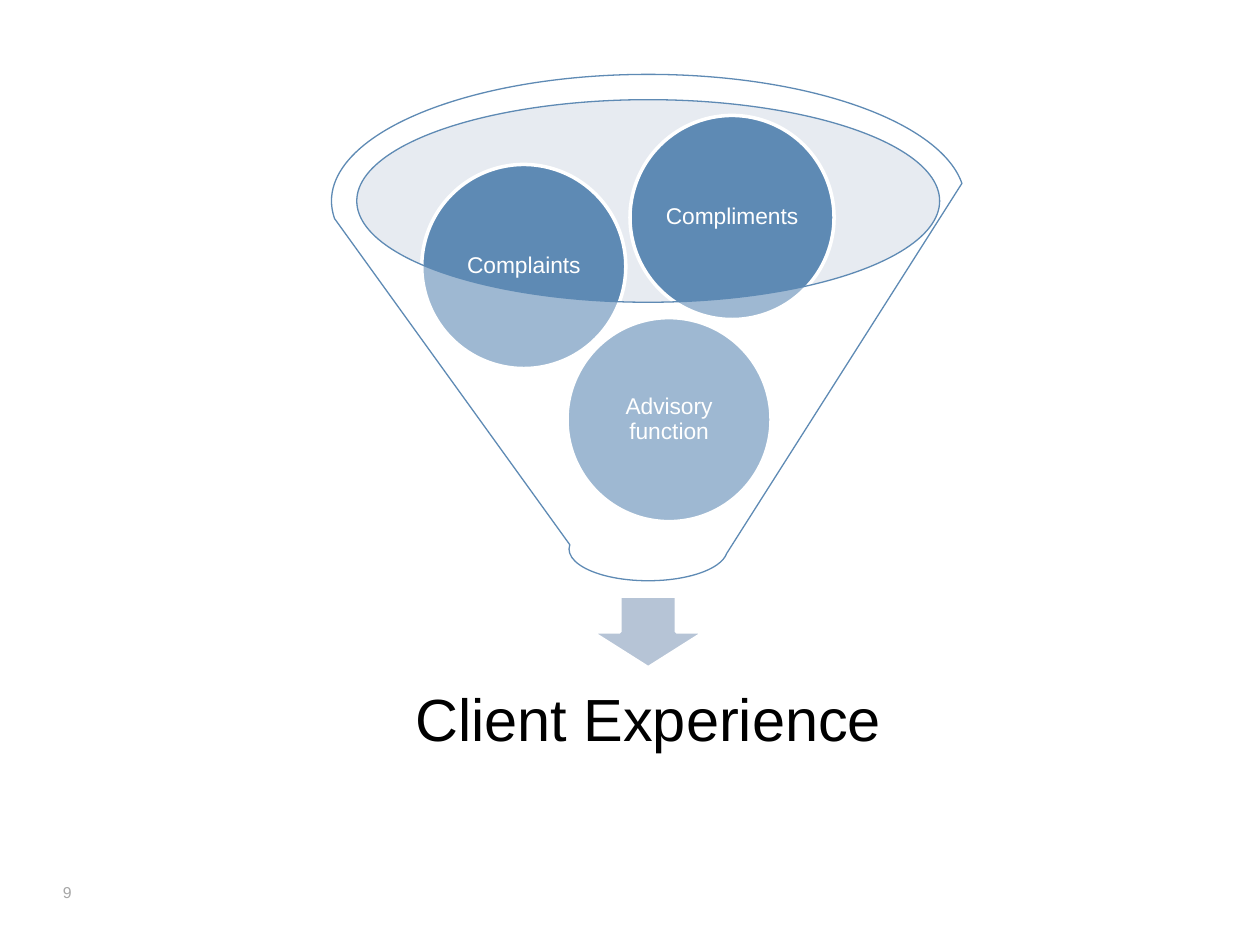
from lxml import etree
from pptx import Presentation
from pptx.dml.color import RGBColor
from pptx.enum import shapes, text
from pptx.oxml.ns import qn
from pptx.util import Pt

BLUE = RGBColor(0x5E, 0x8A, 0xB4)
PALE = RGBColor(0xC5, 0xCF, 0xDE)
ARROW = RGBColor(0xB6, 0xC4, 0xD6)
GREY = RGBColor(0xA6, 0xA6, 0xA6)
WHITE = RGBColor(0xFF, 0xFF, 0xFF)
BLACK = RGBColor(0, 0, 0)

OUTCOME = "Client Experience"
PAGE = "9"
INPUTS = [
    ("Advisory function", 324, 181.5),
    ("Complaints", 241, 94),
    ("Compliments", 360, 66),
]
CIRCLE = 116.6
CENTER = 370.4


def write(frame, words, size, color, margin, anchor, align=None):
    frame.text = words
    frame.word_wrap = True
    frame.auto_size = text.MSO_AUTO_SIZE.NONE
    frame.vertical_anchor = anchor
    frame.margin_left = frame.margin_right = Pt(margin)
    frame.margin_top = frame.margin_bottom = Pt(margin)
    paragraph = frame.paragraphs[0]
    paragraph.alignment = align
    if align is not None:
        paragraph.line_spacing = 0.9
    font = paragraph.runs[0].font
    font.name, font.size, font.color.rgb = "Arial", Pt(size), color


def draw(slide, kind, box, fill, line=None, width=0, opacity=100):
    part = slide.shapes.add_shape(kind, *map(Pt, box))
    part.shadow.inherit = False
    part.fill.solid()
    part.fill.fore_color.rgb = fill
    if opacity < 100:
        color = part.fill._xPr.find(qn("a:solidFill"))[0]
        etree.SubElement(color, qn("a:alpha"), val=str(opacity * 1000))
    if line is None:
        part.line.fill.background()
    else:
        part.line.color.rgb = line
        part.line.width = Pt(width)
    return part


def centered(width, top, height):
    return CENTER - width / 2, top, width, height


def main():
    deck = Presentation()
    deck.slide_width, deck.slide_height = Pt(720), Pt(540)
    slide = deck.slides.add_slide(deck.slide_layouts[5])
    kinds = shapes.MSO_SHAPE
    middle, center = text.MSO_ANCHOR.MIDDLE, text.PP_ALIGN.CENTER

    page = slide.shapes.add_textbox(Pt(36), Pt(470), Pt(144), Pt(45.5))
    write(page.text_frame, PAGE, 9, GREY, 0, text.MSO_ANCHOR.BOTTOM)

    draw(slide, kinds.OVAL, centered(333.4, 56.9, 115.9), PALE, opacity=40)
    draw(slide, kinds.DOWN_ARROW, centered(64.8, 340.6, 41), ARROW, WHITE, 2)

    outcome = slide.shapes.title
    outcome.left, outcome.top, outcome.width, outcome.height = map(
        Pt, centered(310.3, 373.7, 77.8))
    write(outcome.text_frame, OUTCOME, 34, BLACK, 18.7, middle, center)

    for label, left, top in INPUTS:
        circle = draw(slide, kinds.OVAL, (left, top, CIRCLE, CIRCLE), BLUE, WHITE, 2)
        write(circle.text_frame, label, 13, WHITE, 1.3, middle, center)

    draw(slide, kinds.FUNNEL, centered(362, 42.5, 289.4), WHITE, BLUE, 0.75, 40)
    deck.save("out.pptx")


if __name__ == "__main__":
    main()
